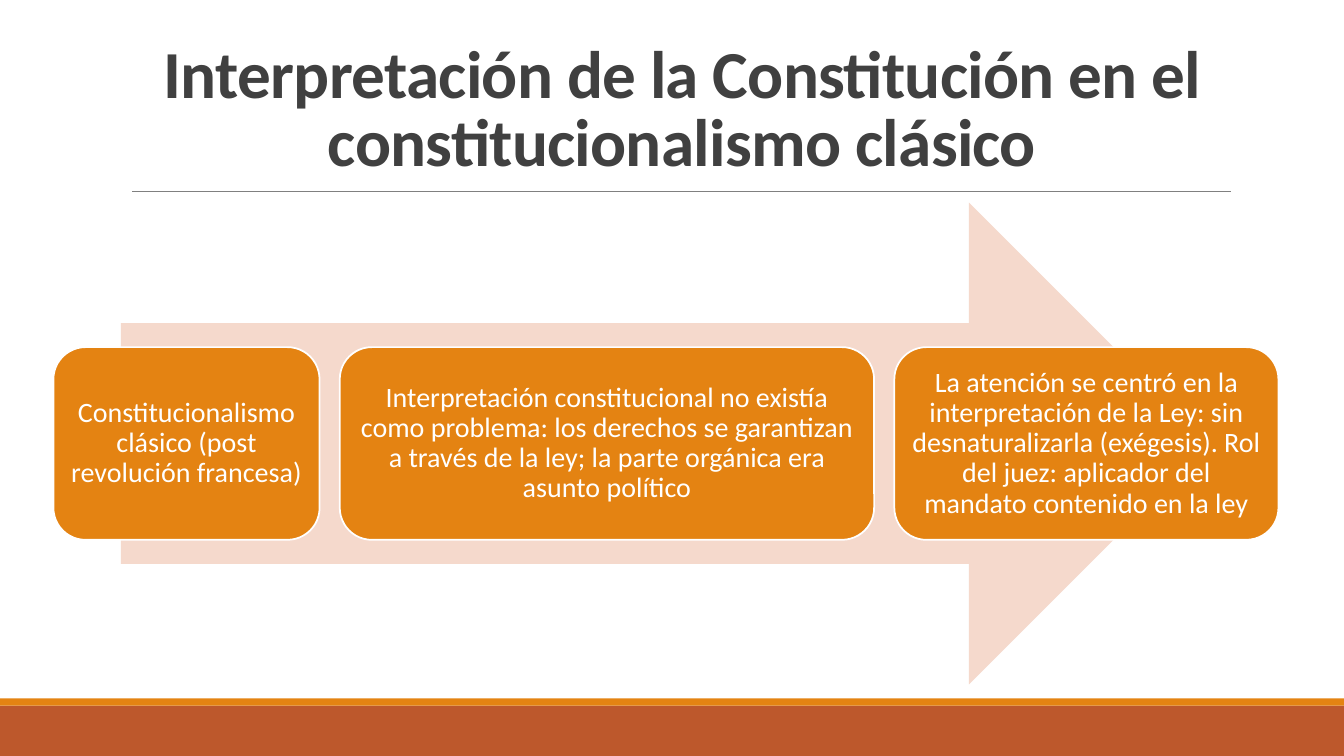
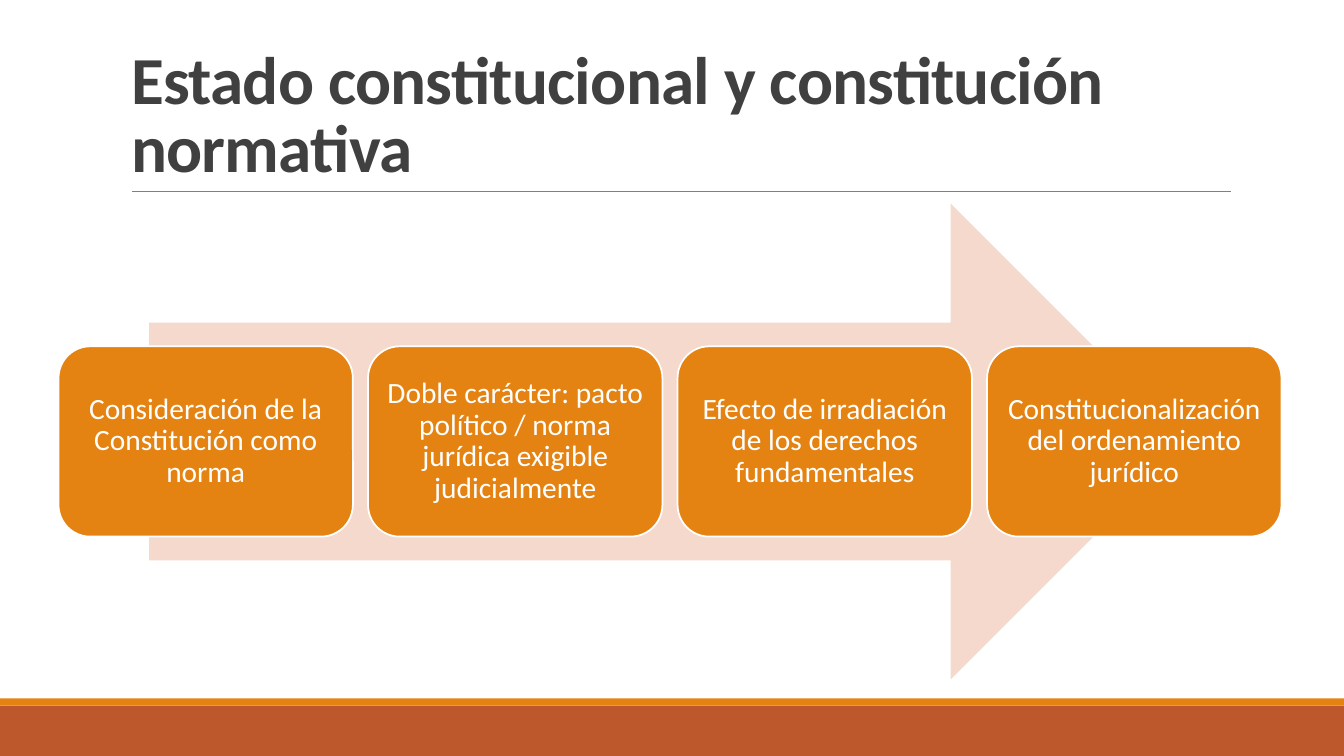
from lxml import etree
from pptx import Presentation
from pptx.dml.color import RGBColor
from pptx.enum.shapes import MSO_CONNECTOR, MSO_SHAPE
from pptx.enum.text import MSO_ANCHOR, MSO_AUTO_SIZE, PP_ALIGN
from pptx.oxml.ns import qn
from pptx.util import Inches, Pt

RECTANGLE = MSO_SHAPE.RECTANGLE
ROUNDED = MSO_SHAPE.ROUNDED_RECTANGLE
RIGHT_ARROW = MSO_SHAPE.RIGHT_ARROW
STRAIGHT = MSO_CONNECTOR.STRAIGHT
NO_AUTOFIT = MSO_AUTO_SIZE.NONE
LEFT, CENTER = PP_ALIGN.LEFT, PP_ALIGN.CENTER
MIDDLE, BOTTOM = MSO_ANCHOR.MIDDLE, MSO_ANCHOR.BOTTOM

WIDTH, HEIGHT = 13.33, 7.5
TITLE_ONLY = 5
BOX_SHARE = 0.4  # box height as a share of the arrow height


class Deck:
    font = "Calibri"
    colors = {
        "band": "BD582C",
        "accent": "E48312",
        "rule": "808080",
        "title": "404040",
        "arrow": "F5D9CC",
        "white": "FFFFFF",
    }

    def __init__(self):
        self.presentation = Presentation()
        self.presentation.slide_width = Inches(WIDTH)
        self.presentation.slide_height = Inches(HEIGHT)
        self.slide = None

    def color(self, name):
        return RGBColor.from_string(self.colors[name])

    def new_slide(self, title, area, align):
        layout = self.presentation.slide_layouts[TITLE_ONLY]
        self.slide = self.presentation.slides.add_slide(layout)
        self.add_shape(RECTANGLE, (0, 7, WIDTH, 0.5), "band")
        self.add_shape(RECTANGLE, (0, 6.93, WIDTH, 0.07), "accent")
        self.add_rule(1.31, 12.21, 1.9)
        self.set_title(title, area, align)

    def set_title(self, text, area, align):
        title = self.slide.shapes.title
        title.left, title.top, title.width, title.height = map(Inches, area)
        title.text_frame.auto_size = NO_AUTOFIT
        self.set_text(title, text, 48, "title", align, BOTTOM, 0.85, bold=True)
        for properties in title.element.iter(qn("a:rPr")):
            properties.set("spc", "-50")

    def add_rule(self, start, end, top):
        rule = self.slide.shapes.add_connector(
            STRAIGHT, Inches(start), Inches(top), Inches(end), Inches(top))
        rule.line.color.rgb = self.color("rule")
        rule.line.width = Pt(0.5)
        etree.SubElement(rule.element.find(qn("p:spPr")), qn("a:effectLst"))

    def add_shape(self, kind, area, fill, line=None):
        shape = self.slide.shapes.add_shape(kind, *map(Inches, area))
        shape.shadow.inherit = False
        shape.fill.solid()
        shape.fill.fore_color.rgb = self.color(fill)
        if line:
            shape.line.color.rgb = self.color(line)
            shape.line.width = Pt(1.25)
        else:
            shape.line.fill.background()
        return shape

    def set_text(self, shape, text, size, color, align, anchor, spacing, bold=False):
        frame = shape.text_frame
        frame.text = text
        frame.word_wrap = True
        frame.vertical_anchor = anchor
        paragraph = frame.paragraphs[0]
        paragraph.alignment = align
        paragraph.line_spacing = spacing
        font = paragraph.runs[0].font
        font.name = self.font
        font.size = Pt(size)
        font.bold = bold
        font.color.rgb = self.color(color)

    def add_box(self, area, text, size, inset):
        box = self.add_shape(ROUNDED, area, "accent", "white")
        self.set_text(box, text, size, "white", CENTER, MIDDLE, 0.9)
        frame = box.text_frame
        frame.margin_left = frame.margin_right = Inches(inset)
        frame.margin_top = frame.margin_bottom = Inches(inset)

    def add_process(self, arrow, left, gap, steps, size, inset):
        """Draw an arrow with a row of (width, text) boxes centred on its axis."""
        self.add_shape(RIGHT_ARROW, arrow, "arrow")
        arrow_top, arrow_height = arrow[1], arrow[3]
        height = arrow_height * BOX_SHARE
        top = arrow_top + (arrow_height - height) / 2
        for width, text in steps:
            self.add_box((left, top, width, height), text, size, inset)
            left += width + gap


def main():
    deck = Deck()

    deck.new_slide("Interpretación de la Constitución en el constitucionalismo clásico",
                   (1.35, 0, 10.83, 1.84), CENTER)
    classic_steps = [
        (2.64, "Constitucionalismo clásico (post revolución francesa)"),
        (5.3, "Interpretación constitucional no existía como problema: los derechos "
              "se garantizan a través de la ley; la parte orgánica era asunto político"),
        (3.81, "La atención se centró en la interpretación de la Ley: sin "
               "desnaturalizarla (exégesis). Rol del juez: aplicador del mandato "
               "contenido en la ley"),
    ]
    deck.add_process((1.2, 2.01, 10.8, 4.78), 0.53, 0.2, classic_steps, 20, 0.08)

    deck.new_slide("Estado constitucional y constitución normativa",
                   (1.2, 0.31, 11, 1.59), LEFT)
    normative_texts = [
        "Consideración de la Constitución como norma",
        "Doble carácter: pacto político / norma jurídica exigible judicialmente",
        "Efecto de irradiación de los derechos fundamentales",
        "Constitucionalización del ordenamiento jurídico",
    ]
    normative_steps = [(2.92, text) for text in normative_texts]
    deck.add_process((1.48, 2.02, 10.31, 4.72), 0.58, 0.15, normative_steps, 21, 0.09)

    deck.presentation.save("out.pptx")


if __name__ == "__main__":
    main()
